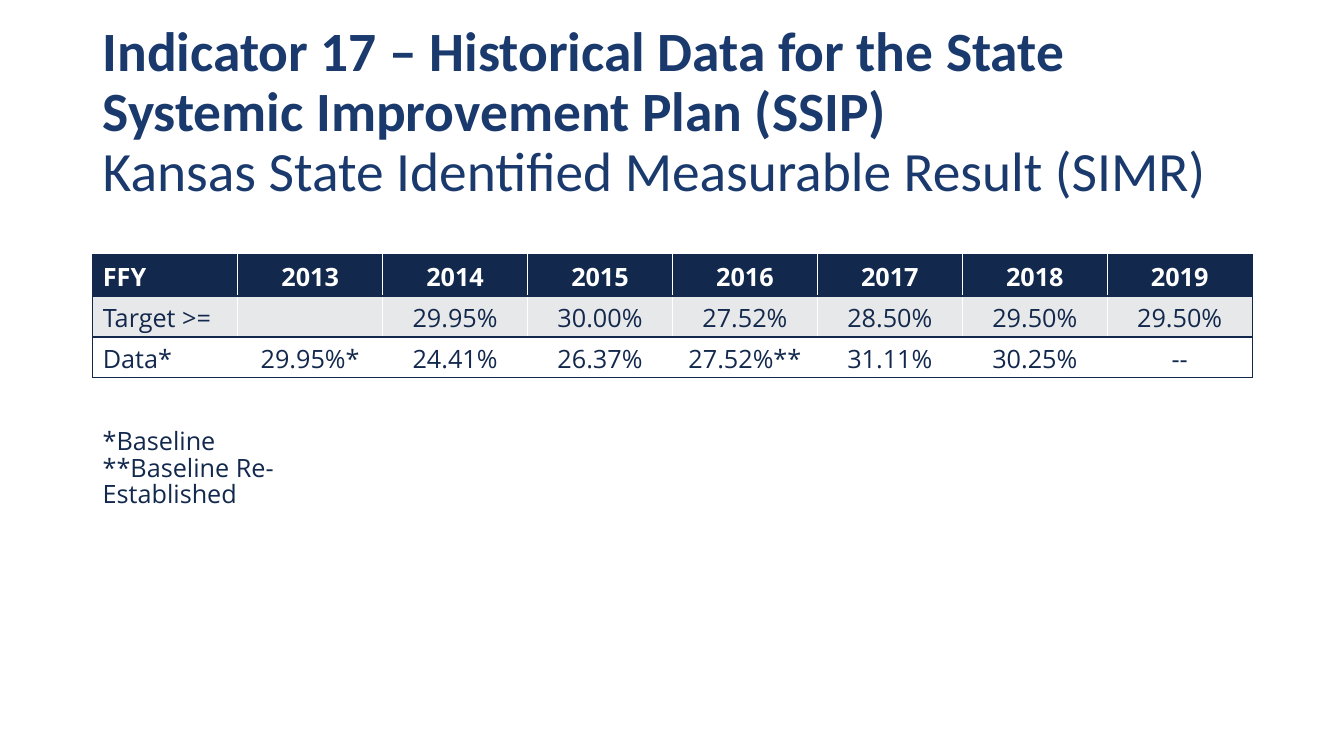
from pptx import Presentation
from pptx import util as u
from pptx.dml import color
from pptx.enum import text
from pptx.oxml import parse_xml
from pptx.oxml import ns

NAVY = "12284C"
WHITE = "FFFFFF"


def rgb(code):
    return color.RGBColor.from_string(code)


def style(font, name, size, code, bold=False):
    font.name = name
    font.size = u.Pt(size)
    font.bold = bold
    font.color.rgb = rgb(code)


deck = Presentation()
deck.slide_width = u.Inches(13.33)
deck.slide_height = u.Inches(7.5)
slide = deck.slides.add_slide(deck.slide_layouts[6])

left, wide = u.Inches(0.92), u.Inches(11.5)

title = slide.shapes.add_textbox(left, u.Inches(0.4), wide, u.Inches(1.45)).text_frame
title.word_wrap = True
title.vertical_anchor = text.MSO_ANCHOR.MIDDLE
head = title.paragraphs[0]
head.line_spacing = 0.9
run = head.add_run()
run.text = "Indicator 17 – Historical Data for the State Systemic Improvement Plan (SSIP)"
style(run.font, "Calibri", 39.6, "1A3A6E", True)
head.add_line_break()
run = head.add_run()
run.text = "Kansas State Identified Measurable Result (SIMR)"
style(run.font, "Calibri", 39.6, "1A3A6E")

rows = [
    ["FFY", "2013", "2014", "2015", "2016", "2017", "2018", "2019"],
    ["Target >=", "", "29.95%", "30.00%", "27.52%", "28.50%", "29.50%", "29.50%"],
    ["Data*", "29.95%*", "24.41%", "26.37%", "27.52%**", "31.11%", "30.25%", "--"],
]
looks = [(NAVY, WHITE, True), ("E7E8E9", NAVY, False), (WHITE, NAVY, False)]
last = len(rows[0]) - 1
grid = slide.shapes.add_table(
    len(rows), len(rows[0]), left, u.Inches(2.53), wide, u.Inches(1.22)
).table

for r, (row, (fill, ink, bold)) in enumerate(zip(rows, looks)):
    for c, word in enumerate(row):
        cell = grid.cell(r, c)
        cell.text = word
        para = cell.text_frame.paragraphs[0]
        para.alignment = text.PP_ALIGN.CENTER if c else text.PP_ALIGN.LEFT
        style(para.font, "Open Sans", 18, ink, bold)
        sides = ["L"] * (c == 0) + ["R"] * (c == last) + ["T", "B"]
        for side in sides:
            cell._tc.get_or_add_tcPr().append(parse_xml(
                f'<a:ln{side} {ns.nsdecls("a")} w="12700"><a:solidFill>'
                f'<a:srgbClr val="{NAVY}"/></a:solidFill></a:ln{side}>'
            ))
        cell.fill.solid()
        cell.fill.fore_color.rgb = rgb(fill)

note = slide.shapes.add_textbox(left, u.Inches(4.21), u.Inches(3.16), u.Inches(0.71)).text_frame
note.word_wrap = True
note.text = "*Baseline\n**Baseline Re-Established"
for para in note.paragraphs:
    para.line_spacing = 0.88
    style(para.font, "Open Sans", 18, NAVY)

deck.save("out.pptx")
